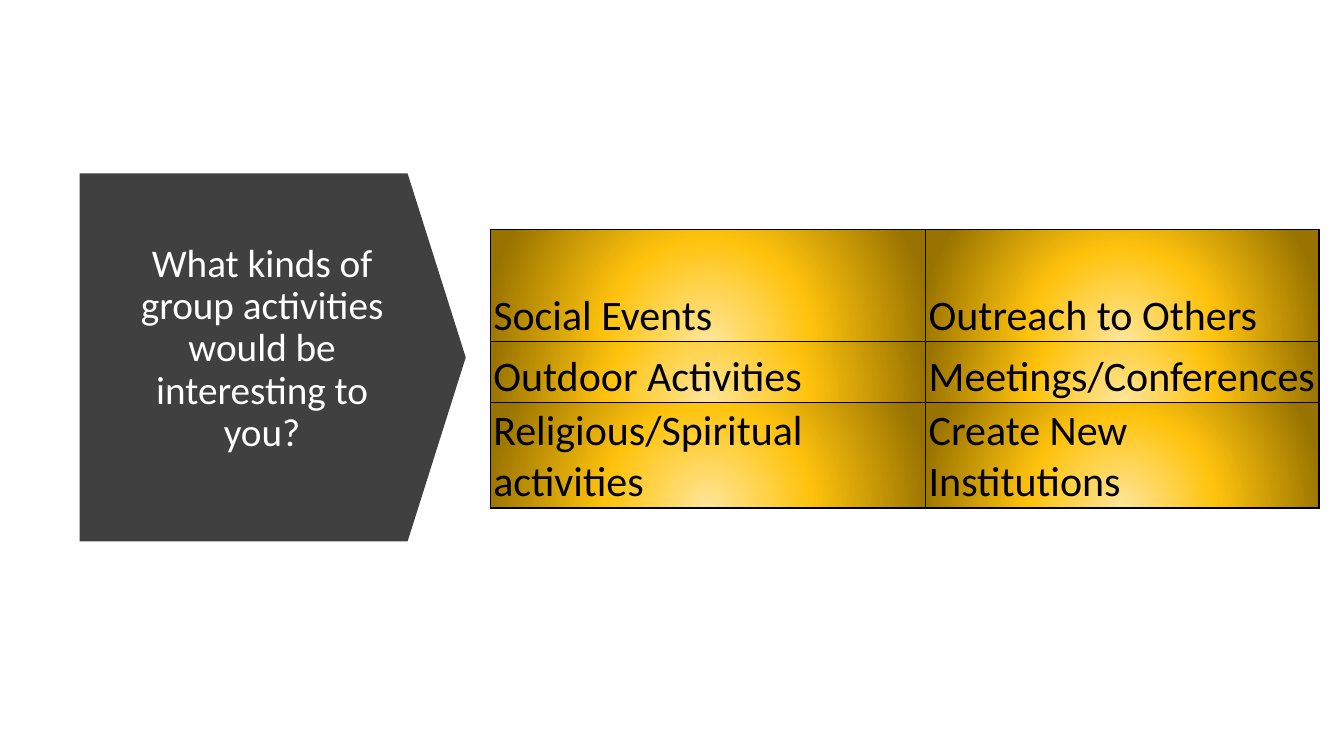
import pptx
import pptx.util
import pptx.dml.color
import pptx.enum.shapes
import pptx.enum.text
import pptx.oxml

Pt = pptx.util.Pt
RGB = pptx.dml.color.RGBColor
ALIGN = pptx.enum.text.PP_ALIGN
ANCHOR = pptx.enum.text.MSO_ANCHOR

TITLE = "What kinds of group activities would be interesting to you?"
ROWS = [
    ("Social Events", "Outreach to Others"),
    ("Outdoor Activities", "Meetings/Conferences"),
    ("Religious/Spiritual activities", "Create New Institutions"),
]
WIDTHS = [311, 281]
HEIGHTS = [80, 43.2, 43.2]

WHITE = RGB(255, 255, 255)
BLACK = RGB(0, 0, 0)
GREY = RGB(0x40, 0x40, 0x40)
GLOW = [(0, RGB(0xFF, 0xE6, 0x99)), (46, RGB(0xFF, 0xC3, 0x0D)),
        (100, RGB(0x99, 0x73, 0x00))]
NS = 'xmlns:a="http://schemas.openxmlformats.org/drawingml/2006/main"'


def write(frame, text, size, color, align=ALIGN.LEFT, spacing=1.0):
    frame.word_wrap = True
    para = frame.paragraphs[0]
    para.alignment = align
    para.line_spacing = spacing
    run = para.add_run()
    run.text = text
    run.font.name = "Calibri"
    run.font.size = Pt(size)
    run.font.color.rgb = color


def style(cell):
    """Give a cell its margins, black borders and glow from below."""
    cell.margin_left = cell.margin_right = cell.margin_top = Pt(2.2)
    cell.margin_bottom = 0
    cell.vertical_anchor = ANCHOR.BOTTOM
    props = cell._tc.get_or_add_tcPr()
    for side in "LRTB":
        props.append(pptx.oxml.parse_xml(
            f'<a:ln{side} {NS} w="{Pt(1)}"><a:solidFill>'
            f'<a:srgbClr val="{BLACK}"/></a:solidFill></a:ln{side}>'))
    stops = "".join(f'<a:gs pos="{at * 1000}"><a:srgbClr val="{color}"/></a:gs>'
                    for at, color in GLOW)
    props.append(pptx.oxml.parse_xml(
        f'<a:gradFill {NS}><a:gsLst>{stops}</a:gsLst><a:path path="circle">'
        '<a:fillToRect l="50000" t="130000" r="50000" b="-30000"/>'
        '</a:path></a:gradFill>'))


def main():
    deck = pptx.Presentation()
    deck.slide_width, deck.slide_height = Pt(960), Pt(540)
    slide = deck.slides.add_slide(deck.slide_layouts[5])
    shapes = slide.shapes

    arrow = shapes.add_shape(pptx.enum.shapes.MSO_SHAPE.DOWN_ARROW,
                             Pt(63.4), Pt(117.4), Pt(262.8), Pt(275.8))
    arrow.rotation = 270
    arrow.adjustments[0], arrow.adjustments[1] = 1, 0.158
    arrow.shadow.inherit = False
    arrow.fill.solid()
    arrow.fill.fore_color.rgb = GREY
    arrow.line.fill.background()

    title = shapes.title
    arrow._element.addnext(title._element)
    title.left, title.top = Pt(83.5), Pt(149)
    title.width, title.height = Pt(207.4), Pt(200.9)
    title.text_frame.auto_size = pptx.enum.text.MSO_AUTO_SIZE.NONE
    title.text_frame.vertical_anchor = ANCHOR.MIDDLE
    write(title.text_frame, TITLE, 28, WHITE, align=ALIGN.CENTER, spacing=0.9)

    table = shapes.add_table(len(ROWS), len(WIDTHS), Pt(350.2), Pt(164.2),
                             Pt(sum(WIDTHS)), Pt(sum(HEIGHTS))).table
    table.first_row = table.horz_banding = False
    for col, width in zip(table.columns, WIDTHS):
        col.width = Pt(width)
    for row, height, texts in zip(table.rows, HEIGHTS, ROWS):
        row.height = Pt(height)
        for cell, text in zip(row.cells, texts):
            style(cell)
            write(cell.text_frame, text, 30, BLACK)

    deck.save("out.pptx")


if __name__ == "__main__":
    main()
